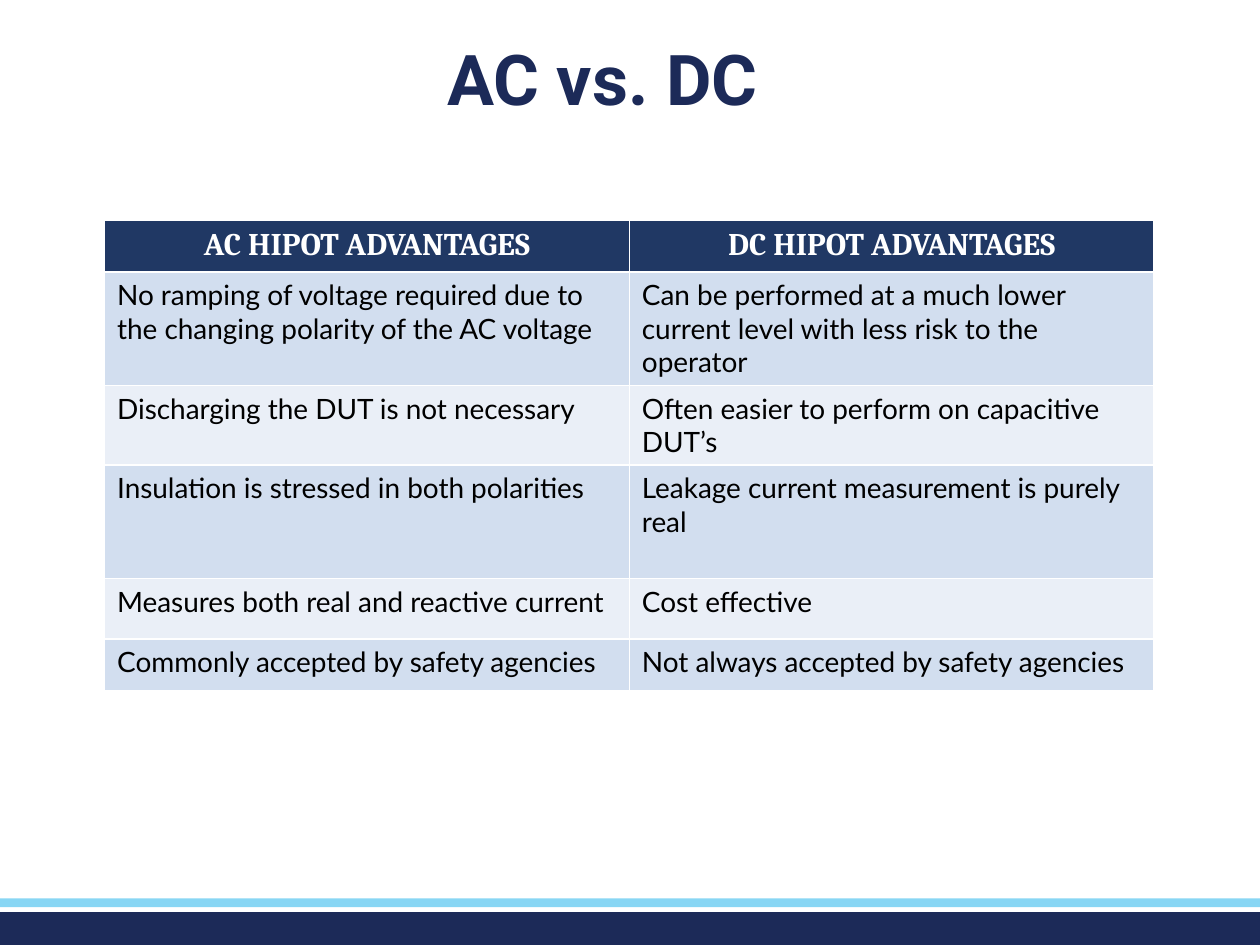
"""Build the AC versus DC hipot comparison slide."""
from dataclasses import dataclass

import pptx
import pptx.dml.color
import pptx.enum.shapes
import pptx.enum.text
import pptx.util

Inches = pptx.util.Inches
Pt = pptx.util.Pt
PP_ALIGN = pptx.enum.text.PP_ALIGN

NAVY = "1C2A58"
SKY = "88D6F4"
HEADER_FILL = "203864"
BAND_FILLS = ("EAEFF7", "D2DEEF")


@dataclass(frozen=True)
class TextStyle:
    font: str
    size: float
    color: str
    bold: bool
    align: PP_ALIGN


@dataclass(frozen=True)
class FooterBar:
    top: float
    height: float
    color: str


@dataclass(frozen=True)
class ComparisonRow:
    ac: str
    dc: str
    height: float


TITLE_STYLE = TextStyle("Roboto", 40, NAVY, True, PP_ALIGN.CENTER)
HEADER_STYLE = TextStyle("Cambria", 18, "FFFFFF", True, PP_ALIGN.CENTER)
BODY_STYLE = TextStyle("Lato", 16, "000000", False, PP_ALIGN.LEFT)

FOOTER_BARS = (FooterBar(7.24, 0.26, NAVY), FooterBar(7.13, 0.07, SKY))

ROWS = (
    ComparisonRow("AC HIPOT ADVANTAGES", "DC HIPOT ADVANTAGES", 0.41),
    ComparisonRow(
        "No ramping of voltage required due to the changing polarity of the AC voltage",
        "Can be performed at a much lower current level with less risk to the operator",
        0.9,
    ),
    ComparisonRow(
        "Discharging the DUT is not necessary",
        "Often easier to perform on capacitive DUT’s",
        0.63,
    ),
    ComparisonRow(
        "Insulation is stressed in both polarities",
        "Leakage current measurement is purely real",
        0.9,
    ),
    ComparisonRow("Measures both real and reactive current", "Cost effective", 0.48),
    ComparisonRow(
        "Commonly accepted by safety agencies",
        "Not always accepted by safety agencies",
        0.41,
    ),
)


def rgb(color: str) -> pptx.dml.color.RGBColor:
    return pptx.dml.color.RGBColor.from_string(color)


def write(frame, text: str, style: TextStyle) -> None:
    paragraph = frame.paragraphs[0]
    paragraph.alignment = style.align
    run = paragraph.add_run()
    run.text = text
    run.font.name = style.font
    run.font.size = Pt(style.size)
    run.font.bold = style.bold
    run.font.color.rgb = rgb(style.color)


def add_footer_bar(slide, bar: FooterBar, width: int) -> None:
    shape = slide.shapes.add_shape(
        pptx.enum.shapes.MSO_SHAPE.RECTANGLE,
        0, Inches(bar.top), width, Inches(bar.height),
    )
    shape.shadow.inherit = False
    shape.fill.solid()
    shape.fill.fore_color.rgb = rgb(bar.color)
    shape.line.fill.background()


def place_title(slide) -> None:
    title = slide.shapes.title
    title.left, title.top = Inches(0.35), Inches(0.33)
    title.width, title.height = Inches(9), Inches(0.66)
    frame = title.text_frame
    frame.auto_size = pptx.enum.text.MSO_AUTO_SIZE.NONE
    frame.vertical_anchor = pptx.enum.text.MSO_ANCHOR.MIDDLE
    write(frame, "AC vs. DC ", TITLE_STYLE)
    frame.paragraphs[0].line_spacing = 0.9


def add_comparison(slide, rows: tuple[ComparisonRow, ...]) -> None:
    total_height = sum(row.height for row in rows)
    table = slide.shapes.add_table(
        len(rows), 2, Inches(0.83), Inches(1.75), Inches(8.33), Inches(total_height)
    ).table
    for index, row in enumerate(rows):
        table.rows[index].height = Inches(row.height)
        is_header = index == 0
        for column, text in enumerate((row.ac, row.dc)):
            cell = table.cell(index, column)
            cell.fill.solid()
            cell.fill.fore_color.rgb = rgb(HEADER_FILL if is_header else BAND_FILLS[index % 2])
            write(cell.text_frame, text, HEADER_STYLE if is_header else BODY_STYLE)


def main() -> None:
    presentation = pptx.Presentation()
    presentation.slide_width = Inches(10)
    presentation.slide_height = Inches(7.5)
    slide = presentation.slides.add_slide(presentation.slide_layouts[5])
    for bar in FOOTER_BARS:
        add_footer_bar(slide, bar, presentation.slide_width)
    place_title(slide)
    add_comparison(slide, ROWS)
    presentation.save("out.pptx")


if __name__ == "__main__":
    main()
